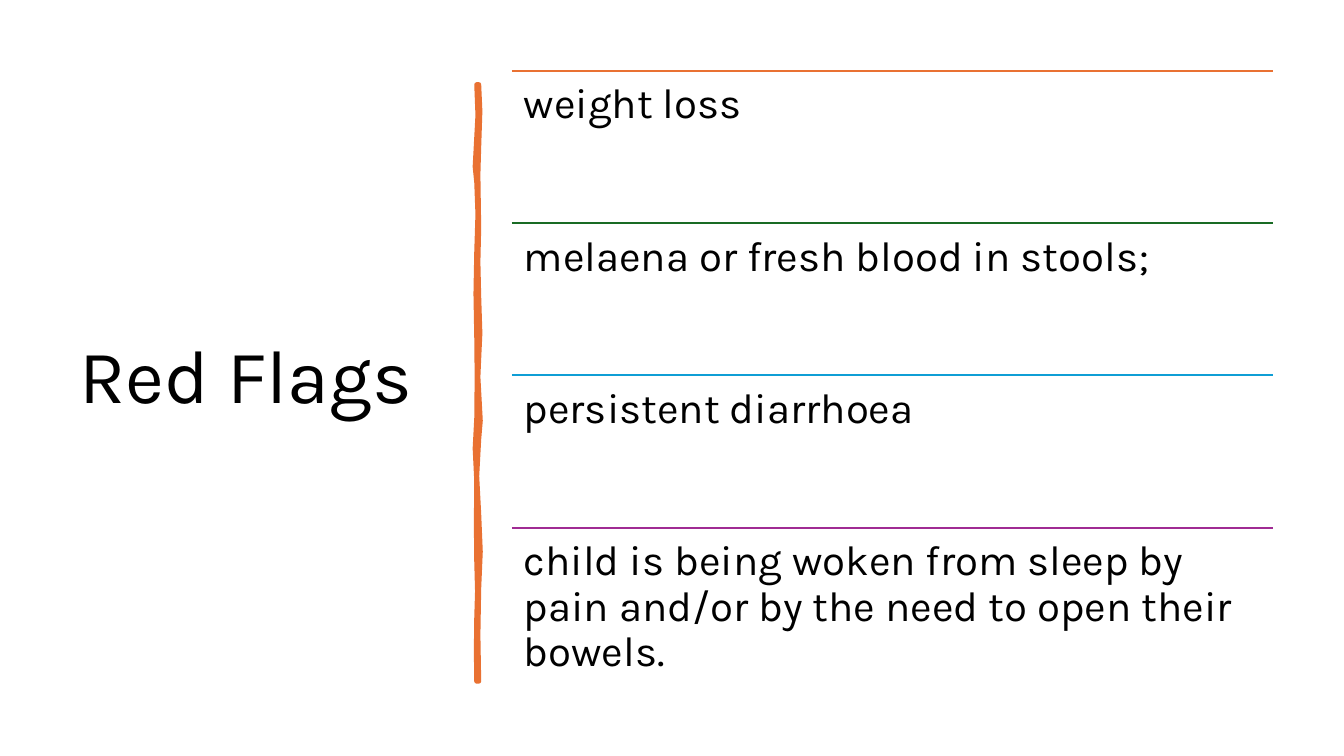
from pptx import Presentation
from pptx.dml.color import RGBColor
from pptx.enum.shapes import MSO_CONNECTOR
from pptx.enum.text import MSO_ANCHOR, MSO_AUTO_SIZE, PP_ALIGN
from pptx.util import Cm, Pt
from lxml import etree

STRAIGHT = MSO_CONNECTOR.STRAIGHT
TOP, MIDDLE = MSO_ANCHOR.TOP, MSO_ANCHOR.MIDDLE
LEFT = PP_ALIGN.LEFT
NO_AUTOFIT = MSO_AUTO_SIZE.NONE
A_NS = "http://schemas.openxmlformats.org/drawingml/2006/main"
ORANGE = "E97132"


def rgb(value):
    return RGBColor.from_string(value)


def write(tf, text, size=30, anchor=TOP, inset=0.3):
    tf.word_wrap = True
    tf.auto_size = NO_AUTOFIT
    tf.vertical_anchor = anchor
    tf.margin_left = tf.margin_right = Cm(inset)
    tf.margin_top = tf.margin_bottom = Cm(inset)
    p = tf.paragraphs[0]
    p.alignment = LEFT
    p.line_spacing = 0.9
    r = p.add_run()
    r.text = text
    r.font.name = "Karla"
    r.font.size = Pt(size)
    r.font.color.rgb = rgb("000000")


prs = Presentation()
prs.slide_width, prs.slide_height = Cm(33.87), Cm(19.05)
s = prs.slides.add_slide(prs.slide_layouts[5])

title = s.shapes.title
title.left, title.top = Cm(1.75), Cm(1.78)
title.width, title.height = Cm(9.5), Cm(15.52)
write(title.text_frame, "Red Flags", size=54, anchor=MIDDLE, inset=0.25)

# Hand-drawn divider: down the right edge, up the left, in hundredths of a cm
right_edge = [
    (1207, 213), (1210, 280), (1207, 371), (1205, 440), (1207, 574),
    (1205, 660), (1207, 747), (1210, 840), (1207, 904), (1205, 950),
    (1211, 1060), (1207, 1107), (1202, 1200), (1207, 1295), (1211, 1390),
    (1207, 1483), (1205, 1600), (1207, 1717),
]
left_edge = [
    (1201, 1717), (1200, 1640), (1201, 1557), (1203, 1490), (1201, 1415),
    (1200, 1320), (1201, 1212), (1197, 1130), (1201, 1054), (1202, 950),
    (1201, 851), (1199, 740), (1201, 635), (1204, 540), (1201, 460),
    (1197, 420), (1204, 290), (1201, 213),
]
outline = right_edge + left_edge
builder = s.shapes.build_freeform(*outline[0], scale=Cm(0.01))
builder.add_line_segments(outline[1:], close=True)
divider = builder.convert_to_shape()
divider.shadow.inherit = False
divider.fill.solid()
divider.fill.fore_color.rgb = rgb(ORANGE)
divider.line.color.rgb = rgb(ORANGE)
divider.line.width = Pt(3.25)

flags = [
    ("weight loss", ORANGE),
    ("melaena or fresh blood in stools;", "196B24"),
    ("persistent diarrhoea", "0F9ED5"),
    ("child is being woken from sleep by pain and/or by the need to open "
     "their bowels.", "A02B93"),
]
x, y, width, row_height = 12.9, 1.78, 19.18, 3.84
for i, (text, color) in enumerate(flags):
    top = Cm(y + i * row_height)
    rule = s.shapes.add_connector(STRAIGHT, Cm(x), top, Cm(x + width), top)
    rule.line.color.rgb = rgb(color)
    rule.line.width = Pt(1.5)
    etree.SubElement(rule._element.spPr, f"{{{A_NS}}}effectLst")
    box = s.shapes.add_textbox(Cm(x), top, Cm(width), Cm(row_height))
    write(box.text_frame, text)

prs.save("out.pptx")
